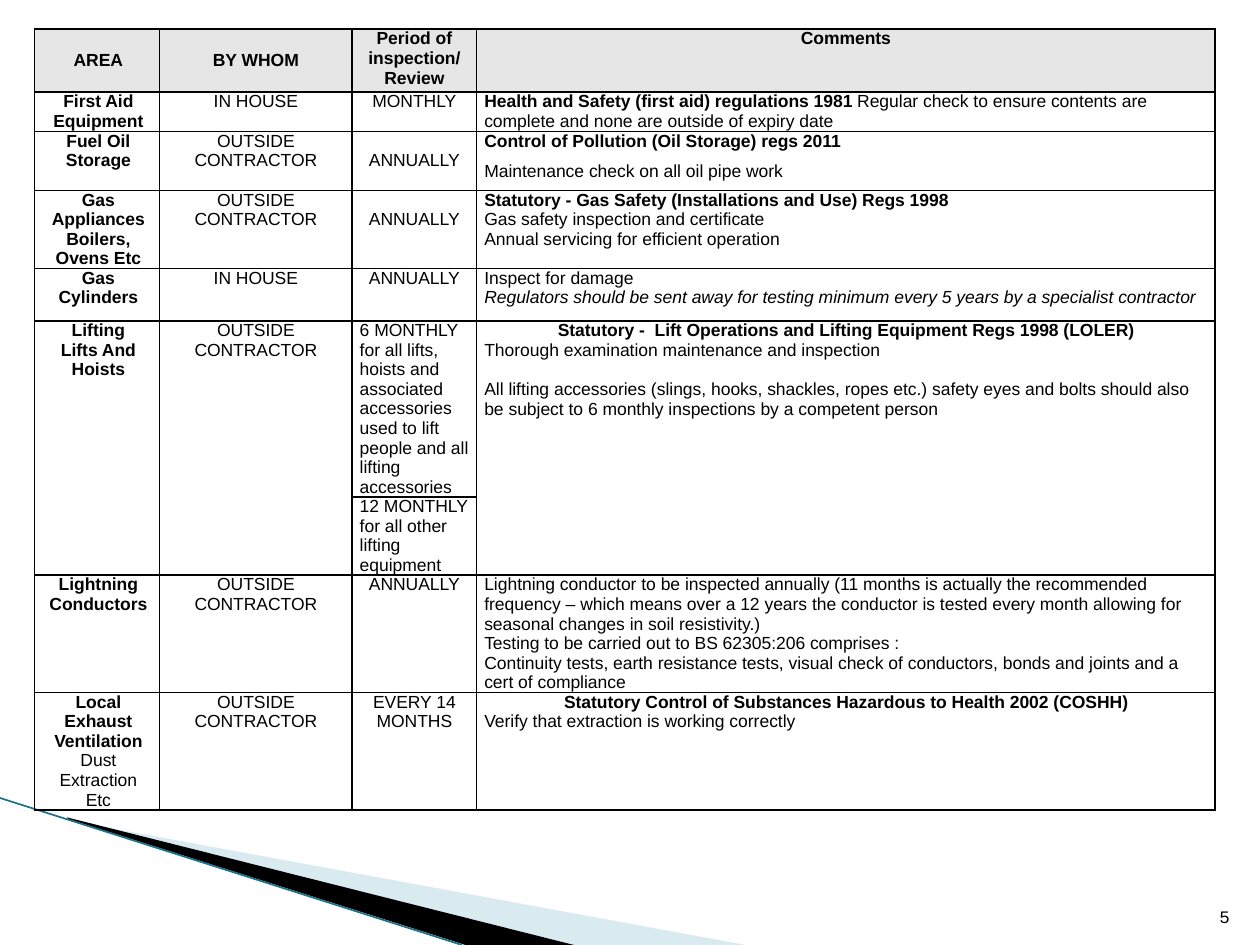
from dataclasses import dataclass

from lxml import etree
from pptx import Presentation
from pptx.dml.color import RGBColor
from pptx.enum.shapes import MSO_CONNECTOR
from pptx.enum.text import MSO_ANCHOR, PP_ALIGN
from pptx.oxml.ns import qn
from pptx.util import Pt

LEFT, MID, RIGHT = PP_ALIGN.LEFT, PP_ALIGN.CENTER, PP_ALIGN.RIGHT
CENTRE, BASE = MSO_ANCHOR.MIDDLE, MSO_ANCHOR.BOTTOM
STRAIGHT = MSO_CONNECTOR.STRAIGHT


@dataclass(frozen=True)
class Theme:
    ink: str = "000000"
    head: str = "E6E6E6"
    pale: str = "A0CBDC"
    teal: str = "17728A"
    font: str = "Arial"
    mono: str = "Courier New"
    size: float = 10
    line: float = 11.2
    rule: float = 1


@dataclass
class Para:
    runs: list
    align: int = LEFT
    before: float = 0
    after: float = 0


THEME = Theme()
COLS = [71.4, 110, 71.2, 422]
ROWS = [36, 22.3, 33.7, 44.6, 30, 100.4, 44.6, 67, 55.8]
HEADS = ["AREA", "BY WHOM", "Period of inspection/ Review", "Comments"]


def plain(text, **kw):
    return Para([(text, "")], **kw)


def bold(text, **kw):
    return Para([(text, "b")], **kw)


def mid(text):
    return plain(text, align=MID)


def area(*names):
    return [bold(name, align=MID) for name in names]


OUTSIDE = [mid("OUTSIDE CONTRACTOR")]
HOUSE = [mid("IN HOUSE")]
YEARLY = [mid("ANNUALLY")]

# None marks a cell that belongs to the merged cell above it.
BODY = [
    [area("First Aid Equipment"), HOUSE, [mid("MONTHLY")],
     [Para([("Health and Safety (first aid) regulations 1981 ", "b"),
            ("Regular check to ensure contents are complete and none are "
             "outside of expiry date", "")])]],
    [area("Fuel Oil Storage"), OUTSIDE, YEARLY,
     [bold("Control of Pollution (Oil Storage) regs 2011", after=6),
      plain("Maintenance check on all oil pipe work")]],
    [area("Gas Appliances", "Boilers, Ovens Etc"), OUTSIDE, YEARLY,
     [bold("Statutory - Gas Safety (Installations and Use) Regs 1998"),
      plain("Gas safety inspection and certificate"),
      plain("Annual servicing for efficient operation")]],
    [area("Gas Cylinders"), HOUSE, YEARLY,
     [plain("Inspect for damage"),
      Para([("Regulators should be sent away for testing minimum every 5 "
             "years by a specialist contractor", "i")])]],
    [area("Lifting", "Lifts And Hoists"), OUTSIDE,
     [plain("6 MONTHLY for all lifts, hoists and associated accessories "
            "used to lift people and all lifting accessories")],
     [bold("Statutory -  Lift Operations and Lifting Equipment Regs 1998 "
           "(LOLER)", align=MID),
      plain("Thorough examination maintenance and inspection"),
      plain("All lifting accessories (slings, hooks, shackles, ropes etc.) "
            "safety eyes and bolts should also be subject to 6 monthly "
            "inspections by a competent person", before=THEME.line)]],
    [None, None, [plain("12 MONTHLY for all other lifting equipment")], None],
    [area("Lightning Conductors"), OUTSIDE, YEARLY,
     [plain("Lightning conductor to be inspected annually (11 months is "
            "actually the recommended frequency – which means over a 12 "
            "years the conductor is tested every month allowing for "
            "seasonal changes in soil resistivity.)"),
      plain("Testing to be carried out to BS 62305:206 comprises :"),
      plain("Continuity tests, earth resistance tests, visual check of "
            "conductors, bonds and joints and a cert of compliance")]],
    [area("Local Exhaust Ventilation") + [mid("Dust Extraction Etc")],
     OUTSIDE, [mid("EVERY 14 MONTHS")],
     [bold("Statutory Control of Substances Hazardous to Health 2002 "
           "(COSHH)", align=MID),
      plain("Verify that extraction is working correctly")]],
]
LOWERED = {(2, 2), (3, 2)}
LIFTS = 5


def rgb(code):
    return RGBColor.from_string(code)


def write(frame, paras, font=THEME.font, indent=0):
    for n, item in enumerate(paras):
        para = frame.paragraphs[0] if n == 0 else frame.add_paragraph()
        para.alignment = item.align
        para.space_before, para.space_after = Pt(item.before), Pt(item.after)
        if indent:
            props = para._p.get_or_add_pPr()
            props.set("marL", str(Pt(indent)))
            props.set("indent", "0")
        for text, style in item.runs:
            run = para.add_run()
            run.text = text
            run.font.name, run.font.size = font, Pt(THEME.size)
            run.font.bold, run.font.italic = style == "b", style == "i"
            run.font.color.rgb = rgb(THEME.ink)


def edge(cell):
    """Draw all four borders; must come before the cell's fill."""
    props = cell._tc.get_or_add_tcPr()
    for side in ("lnL", "lnR", "lnT", "lnB"):
        line = etree.SubElement(props, qn(f"a:{side}"), w=str(Pt(THEME.rule)))
        fill = etree.SubElement(line, qn("a:solidFill"))
        etree.SubElement(fill, qn("a:srgbClr"), val=THEME.ink)


def style(cell, head):
    edge(cell)
    if head:
        cell.fill.solid()
        cell.fill.fore_color.rgb = rgb(THEME.head)
    else:
        cell.fill.background()
    cell.margin_left = cell.margin_right = Pt(4.4)
    cell.margin_top = cell.margin_bottom = 0


def grid(slide):
    rows = [[[bold(text, align=MID)] for text in HEADS]] + BODY
    table = slide.shapes.add_table(
        len(ROWS), len(COLS), Pt(19.8), Pt(16.7),
        Pt(sum(COLS)), Pt(sum(ROWS))).table
    for col, width in zip(table.columns, COLS):
        col.width = Pt(width)
    for row, height in zip(table.rows, ROWS):
        row.height = Pt(height)
    for r, row in enumerate(rows):
        for c, paras in enumerate(row):
            cell = table.cell(r, c)
            style(cell, r == 0)
            if r == 0 and c < 2:
                cell.vertical_anchor = CENTRE
            if (r, c) in LOWERED:
                cell.margin_top = Pt(THEME.line)
            if paras:
                write(cell.text_frame, paras, indent=0 if c else 1.4)
    for c in (0, 1, 3):
        table.cell(LIFTS, c).merge(table.cell(LIFTS + 1, c))


def wedge(slide, points, color, alpha=None):
    pen = slide.shapes.build_freeform(*points[0], scale=Pt(1))
    pen.add_line_segments(points[1:], close=True)
    shape = pen.convert_to_shape()
    shape.shadow.inherit = False
    shape.line.fill.background()
    shape.fill.solid()
    shape.fill.fore_color.rgb = rgb(color)
    if alpha:
        tint = shape._element.spPr.find(".//" + qn("a:srgbClr"))
        etree.SubElement(tint, qn("a:alpha"), val=str(alpha * 1000))


def stroke(slide, start, end):
    line = slide.shapes.add_connector(STRAIGHT, *map(Pt, start + end))
    line.line.color.rgb = rgb(THEME.teal)
    line.line.width = Pt(0.95)
    etree.SubElement(line._element.spPr, qn("a:effectLst"))


def number(slide, text):
    box = slide.shapes.add_textbox(Pt(681), Pt(504.7), Pt(28.8), Pt(28.8))
    box.text_frame.word_wrap = True
    box.text_frame.vertical_anchor = BASE
    write(box.text_frame, [plain(text, align=RIGHT)], THEME.mono)


def main():
    deck = Presentation()
    deck.slide_width, deck.slide_height = Pt(720), Pt(540)
    slide = deck.slides.add_slide(deck.slide_layouts[6])
    wedge(slide, [(39.6, 468.7), (426, 540), (328, 540), (39.6, 468)],
          THEME.pale, 40)
    wedge(slide, [(38.2, 467.3), (328, 540), (266, 540), (38.9, 468)],
          THEME.ink)
    stroke(slide, (0, 456), (264, 540))
    grid(slide)
    number(slide, "5")
    deck.save("out.pptx")


if __name__ == "__main__":
    main()
